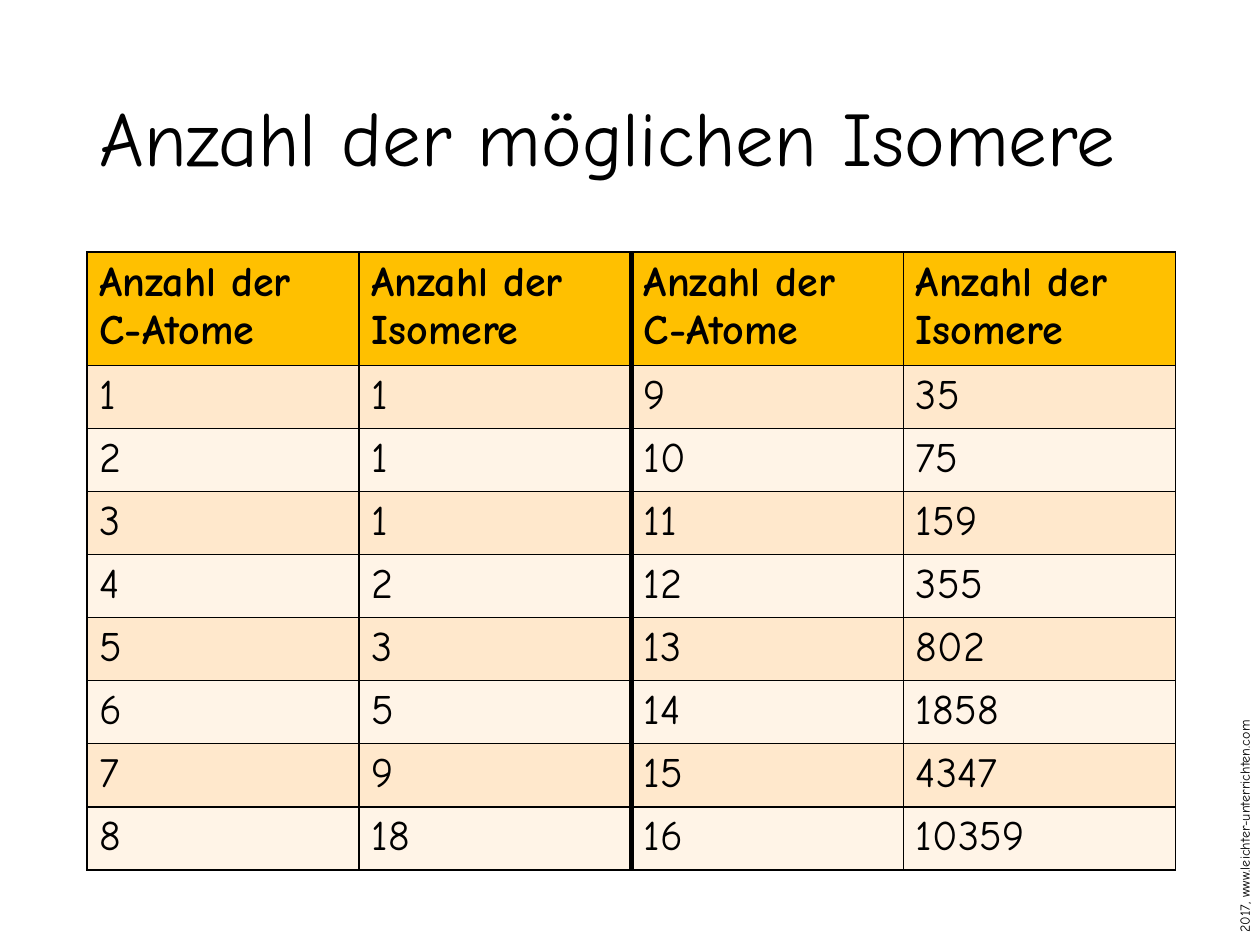
from lxml.etree import SubElement
from pptx import Presentation
from pptx.dml.color import RGBColor
from pptx.enum.text import MSO_ANCHOR
from pptx.oxml.ns import qn
from pptx.util import Inches, Pt

# Content
TITLE = "Anzahl der möglichen Isomere"
COPYRIGHT = "2017, www.leichter-unterrichten.com"
HEADINGS = ("Anzahl der \vC-Atome", "Anzahl der Isomere")
ISOMERS = (1, 1, 1, 2, 3, 5, 9, 18, 35, 75, 159, 355, 802, 1858, 4347, 10359)

# Style
FONT = "Comic Neue"
COLORS = {"ink": "000000", "header": "FFC000", "odd": "FFE8CC", "even": "FFF4E7"}
COLUMN_WIDTH, HEADER_HEIGHT, ROW_HEIGHT = 2.16, 0.87, 0.48
THIN, THICK = 1, 3


def style_text(paragraph, size, bold=False):
    font = paragraph.font
    font.name, font.size, font.bold = FONT, Pt(size), bold
    font.color.rgb = RGBColor.from_string(COLORS["ink"])


def add_text(slide, text, box, size, wrap=True):
    label = slide.shapes.add_textbox(*map(Inches, box))
    frame = label.text_frame
    frame.word_wrap = wrap
    frame.text = text
    style_text(frame.paragraphs[0], size)
    return label


def set_borders(cell, widths):
    properties = cell._tc.get_or_add_tcPr()
    for position, (side, width) in enumerate(widths.items()):
        line = properties.makeelement(qn(f"a:ln{side}"), {"w": str(Pt(width))})
        fill = SubElement(line, qn("a:solidFill"))
        SubElement(fill, qn("a:srgbClr"), val=COLORS["ink"])
        properties.insert(position, line)


presentation = Presentation()
presentation.slide_width, presentation.slide_height = Inches(10), Inches(7.5)
slide = presentation.slides.add_slide(presentation.slide_layouts[6])

# Copyright line along the right edge
copyright_line = add_text(slide, COPYRIGHT, (8.84, 6.34, 2.08, 0.24), 8, wrap=False)
copyright_line.rotation = 270

# Title
title = add_text(slide, TITLE, (0.69, 0.4, 8.95, 1.45), 44)
title.text_frame.vertical_anchor = MSO_ANCHOR.MIDDLE
title.text_frame.paragraphs[0].line_spacing = 0.9

# Isomer table: the lower and upper half of the series side by side
half = len(ISOMERS) // 2
rows = [HEADINGS * 2] + [
    (n, ISOMERS[n - 1], n + half, ISOMERS[n + half - 1]) for n in range(1, half + 1)
]
table = slide.shapes.add_table(
    len(rows), 4, Inches(0.69), Inches(2),
    Inches(4 * COLUMN_WIDTH), Inches(HEADER_HEIGHT + half * ROW_HEIGHT),
).table
for column in table.columns:
    column.width = Inches(COLUMN_WIDTH)

for r, values in enumerate(rows):
    is_header = r == 0
    table.rows[r].height = Inches(HEADER_HEIGHT if is_header else ROW_HEIGHT)
    shade = "header" if is_header else "odd" if r % 2 else "even"
    for c, value in enumerate(values):
        cell = table.cell(r, c)
        cell.text = str(value)
        style_text(cell.text_frame.paragraphs[0], 24, bold=is_header)
        cell.fill.solid()
        cell.fill.fore_color.rgb = RGBColor.from_string(COLORS[shade])
        # A thick rule separates the two halves
        set_borders(cell, {
            "L": THICK if c == 2 else THIN,
            "R": THICK if c == 1 else THIN,
            "T": THIN,
            "B": THIN,
        })

presentation.save("out.pptx")
